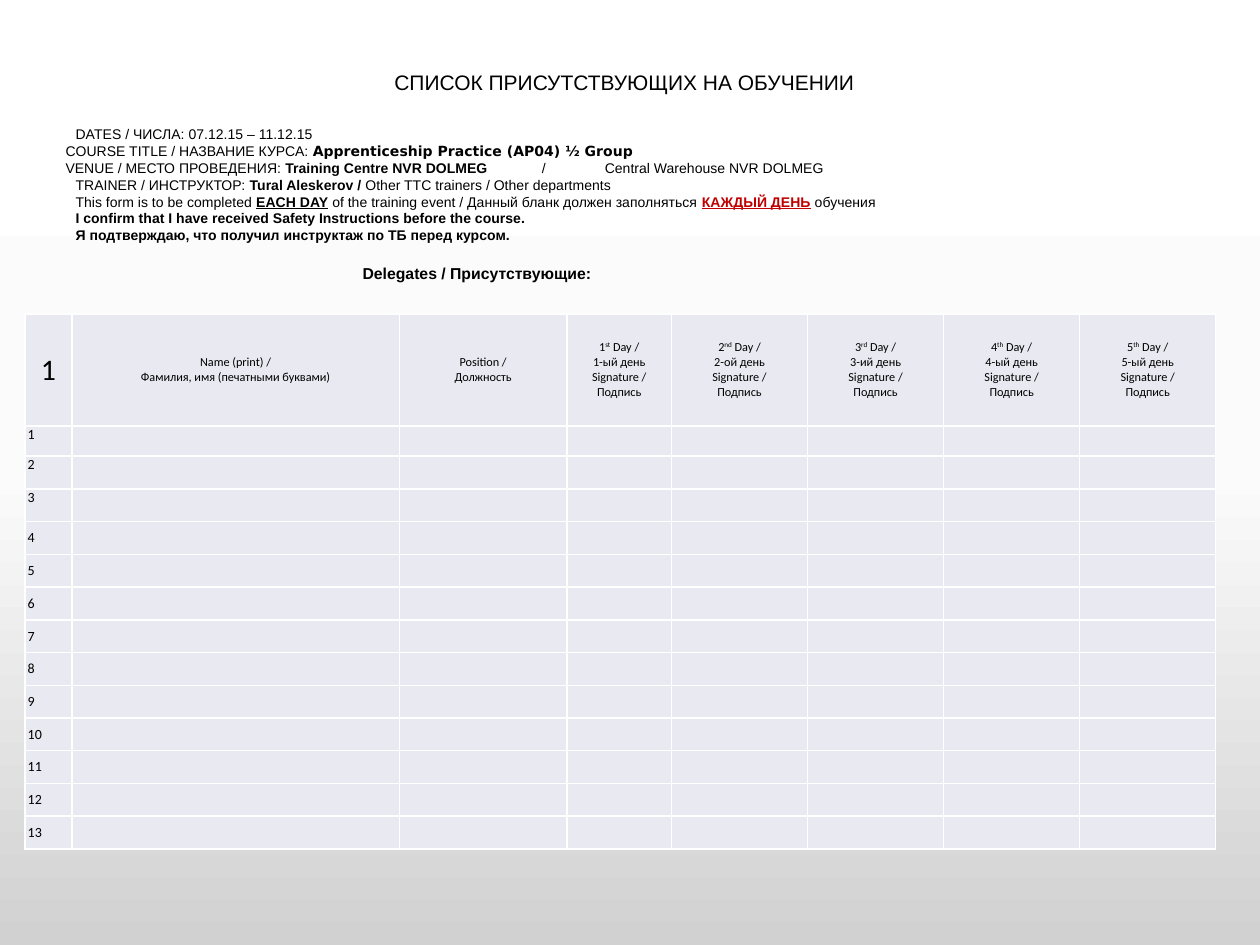
import copy

import pptx
import pptx.dml.color
import pptx.enum.text
import pptx.oxml.ns
import pptx.oxml.xmlchemy
import pptx.util
from lxml import etree

Inches = pptx.util.Inches
RGB = pptx.dml.color.RGBColor
ALIGN = pptx.enum.text.PP_ALIGN
ANCHOR = pptx.enum.text.MSO_ANCHOR
AUTO_SIZE = pptx.enum.text.MSO_AUTO_SIZE
qn = pptx.oxml.ns.qn

BLACK = RGB(0x00, 0x00, 0x00)
WHITE = RGB(0xFF, 0xFF, 0xFF)
OFF_WHITE = RGB(0xFB, 0xFB, 0xFB)
GREY = RGB(0xD1, 0xD1, 0xD1)
RED = RGB(0xC0, 0x00, 0x00)
CELL_FILL = RGB(0xE9, 0xEA, 0xF1)

SLIDE_W, SLIDE_H = 10, 7.5
LEFT, CONTENT_W = 0.02 * SLIDE_W, 0.945 * SLIDE_W
INDENT = 0.3        # left margin of the indented lines
FIRST_LINE = 0.22   # first-line indent of the course and venue lines
VENUE_TABS = (3.63, 3.79)
COLUMN_WEIGHTS = [0.37, 2.6, 1.33, 0.83] + [1.08] * 4
ROW_WEIGHTS = [0.89, 0.24] + [0.26] * 12
TOP_ALIGNED_ROWS = 3

BOLD = {"bold": True}
BOLD_UNDERLINED = {"bold": True, "underline": True}

# Each line: alignment, left margin, first-line indent, runs
DETAILS = [
    (ALIGN.JUSTIFY, INDENT, 0, [("DATES / ЧИСЛА: 07.12.15 – 11.12.15", {})]),
    (ALIGN.LEFT, 0, FIRST_LINE, [
        ("COURSE TITLE / НАЗВАНИЕ КУРСА: ", {}),
        ("Apprenticeship Practice (AP04) ½ Group", {"bold": True, "font": "DejaVu Sans"})]),
    (ALIGN.LEFT, 0, FIRST_LINE, [
        ("VENUE / МЕСТО ПРОВЕДЕНИЯ: ", {}),
        ("Training Centre NVR DOLMEG", BOLD),
        ("\t/\tCentral Warehouse NVR DOLMEG", {})]),
    (ALIGN.JUSTIFY, INDENT, 0, [
        ("TRAINER / ИНСТРУКТОР: ", {}),
        ("Tural Aleskerov / ", BOLD),
        ("Other TTC trainers / Other departments", {})]),
    (ALIGN.JUSTIFY, INDENT, 0, [
        ("This form is to be completed ", {}),
        ("EACH DAY", BOLD_UNDERLINED),
        (" of the training event / Данный бланк должен заполняться ", {}),
        ("КАЖДЫЙ ДЕНЬ", {**BOLD_UNDERLINED, "color": RED}),
        (" обучения", {})]),
    (ALIGN.LEFT, INDENT, 0, [
        ("I confirm that I have received Safety Instructions before the course.", BOLD)]),
    (ALIGN.LEFT, INDENT, 0, [
        ("Я подтверждаю, что получил инструктаж по ТБ перед курсом.", BOLD)]),
]
DAYS = [("st", "ый"), ("nd", "ой"), ("rd", "ий"), ("th", "ый"), ("th", "ый")]


def add_text(paragraph, text, size=8, font="Arial", color=BLACK,
             bold=False, underline=False, superscript=False):
    run = paragraph.add_run()
    run.text = text
    run.font.size = pptx.util.Pt(size)
    run.font.name = font
    run.font.color.rgb = color
    run.font.bold = bold
    run.font.underline = underline
    if superscript:
        run.font._element.set("baseline", "30000")


def paragraph_at(frame, index):
    return frame.paragraphs[0] if index == 0 else frame.add_paragraph()


def indent(paragraph, margin, first_line=0, tabs=()):
    paragraph.space_before = pptx.util.Pt(0)
    properties = paragraph._p.get_or_add_pPr()
    properties.set("marL", str(Inches(margin)))
    properties.set("indent", str(Inches(first_line)))
    etree.SubElement(properties, qn("a:buNone"))
    if tabs:
        stops = etree.SubElement(properties, qn("a:tabLst"))
        for position in tabs:
            etree.SubElement(stops, qn("a:tab"), pos=str(Inches(position)), algn="l")


def place(shape, box):
    shape.left, shape.top, shape.width, shape.height = (Inches(v) for v in box)
    shape.text_frame.vertical_anchor = ANCHOR.TOP
    shape.text_frame.auto_size = AUTO_SIZE.SHAPE_TO_FIT_TEXT
    return shape.text_frame


def paint_background(slide):
    fill = slide.background.fill
    fill.gradient()
    fill.gradient_angle = 270
    stops = slide.element.find(".//" + qn("a:gsLst"))
    stops.insert(1, copy.deepcopy(stops[0]))
    for stop, position, color in zip(fill.gradient_stops, (0, 0.5, 1),
                                     (WHITE, OFF_WHITE, GREY)):
        stop.position = position
        stop.color.rgb = color


def fill_heading(slide, box):
    heading = place(slide.shapes.title, box).paragraphs[0]
    heading.alignment = ALIGN.LEFT
    add_text(heading, "СПИСОК ПРИСУТСТВУЮЩИХ НА ОБУЧЕНИИ", size=12)


def fill_details(slide, box):
    frame = place(slide.placeholders[1], box)
    for index, (alignment, margin, first_line, runs) in enumerate(DETAILS):
        line = paragraph_at(frame, index)
        line.alignment = alignment
        has_tab = any("\t" in text for text, _ in runs)
        indent(line, margin, first_line, VENUE_TABS if has_tab else ())
        for text, style in runs:
            add_text(line, text, **style)


def add_delegates_label(slide, box):
    frame = place(slide.shapes.add_textbox(0, 0, 0, 0), box)
    frame.word_wrap = False
    indent(frame.paragraphs[0], INDENT)
    add_text(frame.paragraphs[0], "Delegates / Присутствующие:", size=9, bold=True)


def format_cell(cell):
    cell.margin_left = cell.margin_right = Inches(0.02)
    cell.margin_top = cell.margin_bottom = 0
    cell.vertical_anchor = ANCHOR.MIDDLE
    properties = cell._tc.get_or_add_tcPr()
    for side in ("a:lnL", "a:lnR", "a:lnT", "a:lnB"):
        border = etree.SubElement(properties, qn(side), w=str(pptx.util.Pt(1)))
        solid = etree.SubElement(border, qn("a:solidFill"))
        etree.SubElement(solid, qn("a:srgbClr"), val=str(WHITE))
    cell.fill.solid()
    cell.fill.fore_color.rgb = CELL_FILL


def write_header(cell, lines, size=7):
    for index, runs in enumerate(lines):
        paragraph = paragraph_at(cell.text_frame, index)
        paragraph.alignment = ALIGN.CENTER
        for text, superscript in runs:
            add_text(paragraph, text, size=size, font="Calibri", superscript=superscript)


def add_register(slide, box):
    left, top, width, height = box
    table = slide.shapes.add_table(len(ROW_WEIGHTS), len(COLUMN_WEIGHTS),
                                   *(Inches(v) for v in box)).table
    table.first_row = table.horz_banding = False
    for column, weight in zip(table.columns, COLUMN_WEIGHTS):
        column.width = Inches(width * weight / sum(COLUMN_WEIGHTS))
    for row, weight in zip(table.rows, ROW_WEIGHTS):
        row.height = Inches(height * weight / sum(ROW_WEIGHTS))
    for cell in table.iter_cells():
        format_cell(cell)

    # Header row
    write_header(table.cell(0, 0), [[("1", False)]], size=17)
    for column, labels in enumerate([("Name (print) /", "Фамилия, имя (печатными буквами)"),
                                     ("Position /", "Должность")], start=1):
        write_header(table.cell(0, column), [[(label, False)] for label in labels])
    for day, (english, russian) in enumerate(DAYS, start=1):
        write_header(table.cell(0, day + 2), [
            [(str(day), False), (english, True), (" Day /", False)],
            [(f"{day}-{russian} день", False)],
            [("Signature /", False)],
            [("Подпись", False)]])

    # Numbered rows, blank for signatures
    for number in range(1, len(ROW_WEIGHTS)):
        number_cell = table.cell(number, 0)
        if number <= TOP_ALIGNED_ROWS:
            number_cell.vertical_anchor = ANCHOR.TOP
        add_text(number_cell.text_frame.paragraphs[0], str(number), font="Calibri")
        for column in range(1, len(COLUMN_WEIGHTS)):
            blank = table.cell(number, column).text_frame.paragraphs[0]
            etree.SubElement(blank._p, qn("a:endParaRPr"), sz="800")


def main():
    presentation = pptx.Presentation()
    presentation.slide_width = Inches(SLIDE_W)
    presentation.slide_height = Inches(SLIDE_H)
    slide = presentation.slides.add_slide(presentation.slide_layouts[1])
    paint_background(slide)
    fill_heading(slide, (3.03, 0.5, SLIDE_W / 2, 0.3))
    fill_details(slide, (LEFT, 0.95, CONTENT_W, 1.04))
    add_delegates_label(slide, (2.48, 2.04, 2.33, 0.25))
    add_register(slide, (LEFT, 2.49, CONTENT_W, 4.25))
    presentation.save("out.pptx")


if __name__ == "__main__":
    main()
